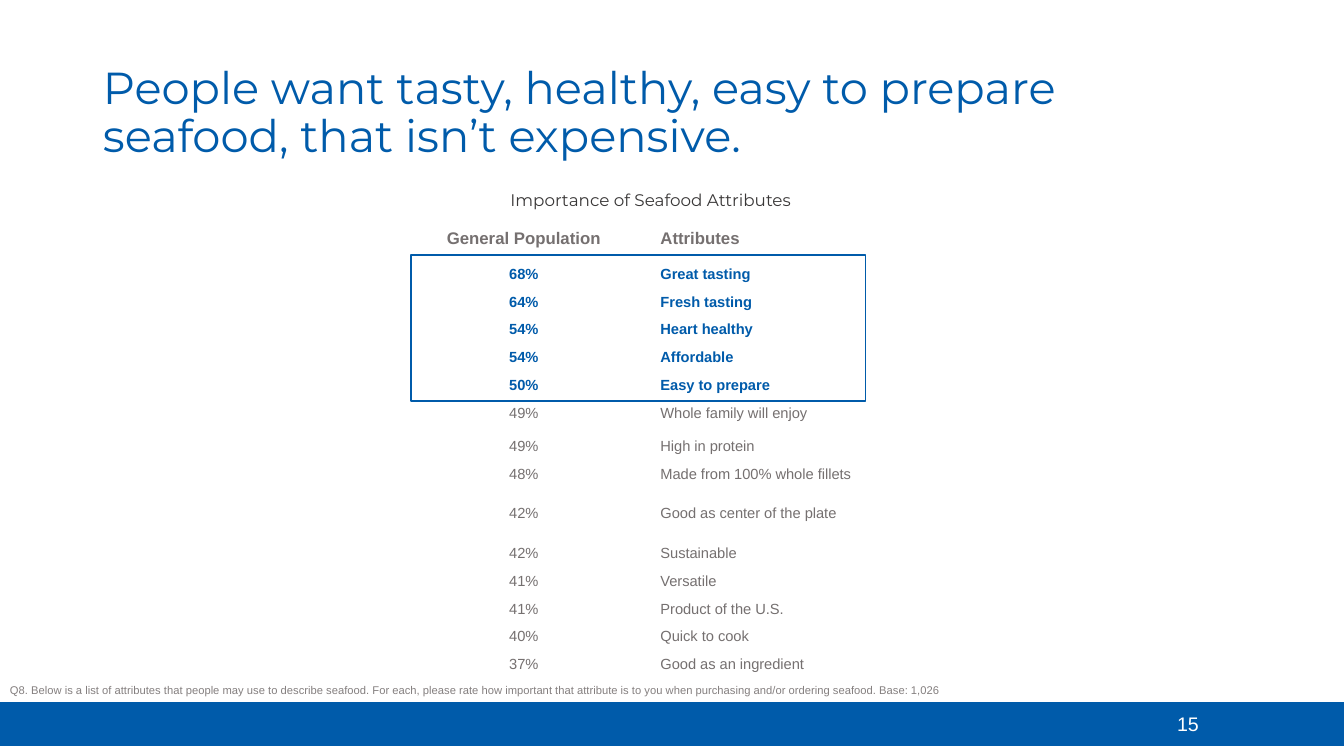
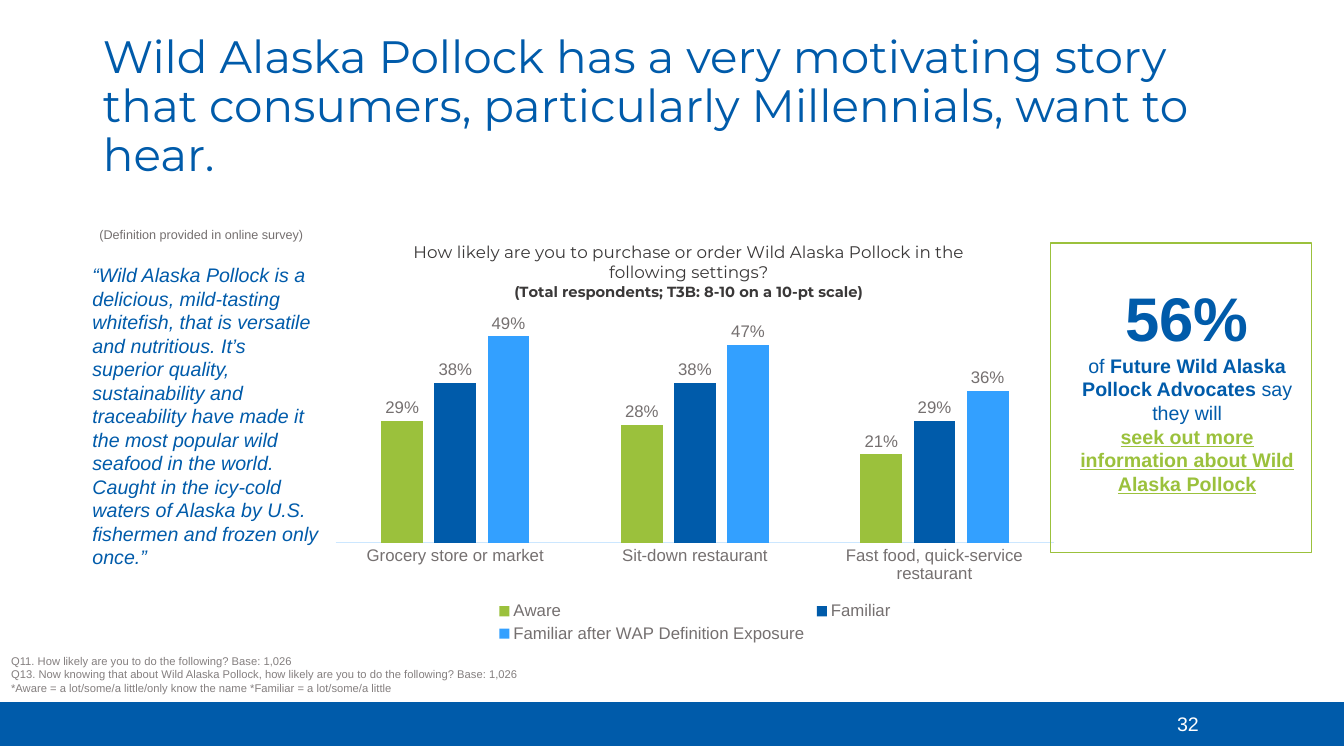
from lxml import etree
from pptx import Presentation
from pptx.chart.data import CategoryChartData
from pptx.dml.color import RGBColor
from pptx.enum.chart import XL_CHART_TYPE as ChartType
from pptx.enum.chart import XL_LABEL_POSITION as LabelPosition
from pptx.enum.chart import XL_LEGEND_POSITION as LegendPosition
from pptx.enum.chart import XL_TICK_MARK as TickMark
from pptx.enum.shapes import MSO_SHAPE as Shape
from pptx.enum.text import MSO_ANCHOR as Anchor
from pptx.enum.text import MSO_AUTO_SIZE as AutoSize
from pptx.enum.text import PP_ALIGN as Align
from pptx.oxml.ns import qn
from pptx.util import Cm, Pt

BLUE, GREEN, SKY, PALE = "005BAA", "9BC13C", "33A0FF", "CCE7FF"
GRAY, NOTE_GRAY, DARK, WHITE = "757070", "847F7F", "3A3838", "FFFFFF"
BODY_FONT, HEAD_FONT = "Arial", "Montserrat"
TITLE_ONLY = 5


def color(hex_string):
    return RGBColor.from_string(hex_string)


def lengths(box):
    return [Cm(value) for value in box]


def style_font(font, size, hex_color, name=BODY_FONT, bold=False, italic=False, underline=False):
    font.name, font.size = name, Pt(size)
    font.bold, font.italic, font.underline = bold, italic, underline
    font.color.rgb = color(hex_color)


def write(frame, paragraphs, align=Align.LEFT, **style):
    """Fill a frame; each paragraph is a list of (text, style changes)."""
    for index, runs in enumerate(paragraphs):
        paragraph = frame.add_paragraph() if index else frame.paragraphs[0]
        paragraph.alignment = align
        for text, changes in runs:
            run = paragraph.add_run()
            run.text = text
            style_font(run.font, **{**style, **changes})


def place(element, position, **values):
    """Give a chart part a manual layout in fractions of the chart."""
    for old in element.findall(qn("c:layout")):
        element.remove(old)
    layout = etree.Element(qn("c:layout"))
    manual = etree.SubElement(layout, qn("c:manualLayout"))
    for name, value in values.items():
        etree.SubElement(manual, qn(f"c:{name}")).set("val", str(value))
    element.insert(position, layout)


class Deck:
    def __init__(self):
        self.presentation = Presentation()
        self.presentation.slide_width = Cm(33.87)
        self.presentation.slide_height = Cm(19.05)
        self.slide = None

    def new_slide(self, title, number, title_height, title_size):
        layout = self.presentation.slide_layouts[TITLE_ONLY]
        self.slide = self.presentation.slides.add_slide(layout)
        self.rectangle((0, 17.7, 33.87, 1.07), BLUE, fill=BLUE)
        holder = self.slide.shapes.title
        holder.left, holder.top, holder.width, holder.height = lengths((2.34, 1.02, 29.21, title_height))
        frame = holder.text_frame
        frame.auto_size, frame.word_wrap = AutoSize.NONE, True
        frame.vertical_anchor = Anchor.BOTTOM
        write(frame, [[(title, {})]], size=title_size, hex_color=BLUE, name=HEAD_FONT)
        frame.paragraphs[0].line_spacing = 0.9
        self.text((28.58, 17.81, 2.72, 1.02), [[(str(number), {})]],
                  align=Align.CENTER, size=14, hex_color=WHITE)

    def rectangle(self, box, line, fill=None):
        shape = self.slide.shapes.add_shape(Shape.RECTANGLE, *lengths(box))
        shape.shadow.inherit = False
        shape.line.color.rgb, shape.line.width = color(line), Pt(1)
        if fill:
            shape.fill.solid()
            shape.fill.fore_color.rgb = color(fill)
        else:
            shape.fill.background()

    def text(self, box, paragraphs, **style):
        frame = self.slide.shapes.add_textbox(*lengths(box)).text_frame
        frame.word_wrap = True
        write(frame, paragraphs, **style)

    def footnotes(self, box, lines):
        self.text(box, [[(line, {})] for line in lines], size=8, hex_color=NOTE_GRAY)

    def table(self, left, top, column_width, heights, rows, highlighted):
        """A header row, then the highlighted rows, then plain ones."""
        columns = len(rows[0])
        table = self.slide.shapes.add_table(
            len(rows), columns, Cm(left), Cm(top),
            Cm(column_width * columns), Cm(sum(heights))).table
        table.first_row = table.horz_banding = False
        for column in table.columns:
            column.width = Cm(column_width)
        for row_index, values in enumerate(rows):
            table.rows[row_index].height = Cm(heights[row_index])
            header = row_index == 0
            strong = 0 < row_index <= highlighted
            for column_index, value in enumerate(values):
                cell = table.cell(row_index, column_index)
                cell.fill.background()
                write(cell.text_frame, [[(value, {})]],
                      align=Align.LEFT if column_index else Align.CENTER,
                      size=12 if header else 10.5,
                      hex_color=BLUE if strong else GRAY, bold=header or strong)

    def column_chart(self, box, title, categories, series):
        data = CategoryChartData(number_format="0%")
        data.categories = categories
        for name, values, _ in series:
            data.add_series(name, values)
        chart = self.slide.shapes.add_chart(
            ChartType.COLUMN_CLUSTERED, *lengths(box), data).chart
        style_font(chart.font, 12, GRAY)

        # Title
        chart.has_title = True
        write(chart.chart_title.text_frame, title, align=Align.CENTER,
              size=12, hex_color=DARK, name=HEAD_FONT)
        chart.chart_title.include_in_layout = False
        place(chart.chart_title._element, 1, xMode="edge", yMode="edge", x=0.12, y=0.09)

        # Axes
        value_axis, category_axis = chart.value_axis, chart.category_axis
        value_axis.visible = value_axis.has_major_gridlines = False
        value_axis.minimum_scale, value_axis.maximum_scale = 0, 0.6
        category_axis.major_tick_mark = category_axis.minor_tick_mark = TickMark.NONE
        category_axis.format.line.color.rgb = color(PALE)
        category_axis.format.line.width = Pt(0.75)
        style_font(category_axis.tick_labels.font, 12, GRAY)

        # Columns and their labels
        plot = chart.plots[0]
        plot.gap_width, plot.overlap, plot.vary_by_categories = 219, -27, False
        for column, (_, _, fill) in zip(plot.series, series):
            column.format.fill.solid()
            column.format.fill.fore_color.rgb = color(fill)
            labels = column.data_labels
            labels.show_value = True
            labels.number_format, labels.number_format_is_linked = "0%", False
            labels.position = LabelPosition.OUTSIDE_END
            style_font(labels.font, 12, GRAY)
        place(chart._chartSpace.chart.plotArea, 0, layoutTarget="inner",
              xMode="edge", yMode="edge", x=0.02, y=0.205, w=0.96, h=0.563)

        # Legend
        chart.has_legend = True
        chart.legend.position = LegendPosition.BOTTOM
        chart.legend.include_in_layout = False
        style_font(chart.legend.font, 12, GRAY)
        place(chart.legend._element, 1, xMode="edge", yMode="edge", x=0.23, y=0.89, w=0.54, h=0.11)


def attributes_slide(deck):
    deck.new_slide("People want tasty, healthy, easy to prepare seafood, that isn’t expensive.",
                   15, title_height=3.2, title_size=32)
    deck.footnotes((0, 17.09, 28.52, 0.61), [
        "Q8. Below is a list of attributes that people may use to describe seafood. "
        "For each, please rate how important that attribute is to you when purchasing "
        "and/or ordering seafood. Base: 1,026"])
    rows = [
        ("General Population", "Attributes"),
        ("68%", "Great tasting"),
        ("64%", "Fresh tasting"),
        ("54%", "Heart healthy"),
        ("54%", "Affordable"),
        ("50%", "Easy to prepare"),
        ("49%", "Whole family will enjoy"),
        ("49%", "High in protein"),
        ("48%", "Made from 100% whole fillets"),
        ("42%", "Good as center of the plate"),
        ("42%", "Sustainable"),
        ("41%", "Versatile"),
        ("41%", "Product of the U.S."),
        ("40%", "Quick to cook"),
        ("37%", "Good as an ingredient"),
    ]
    tall_rows = {0: 0.94, 6: 0.84, 8: 1, 9: 1, 14: 0.84}
    heights = [tall_rows.get(index, 0.7) for index in range(len(rows))]
    deck.table(10.01, 5.64, 6.38, heights, rows, highlighted=5)
    deck.rectangle((10.36, 6.43, 11.46, 3.68), BLUE)
    deck.text((10.01, 4.65, 12.78, 0.76), [[("Importance of Seafood Attributes", {})]],
              align=Align.CENTER, size=12, hex_color=DARK, name=HEAD_FONT)


def story_slide(deck):
    deck.new_slide("Wild Alaska Pollock has a very motivating story that consumers, "
                   "particularly Millennials, want to hear.",
                   32, title_height=3.68, title_size=32.4)
    deck.column_chart(
        (8.08, 4.98, 18.87, 11.33),
        [[("How likely are you to purchase or order Wild Alaska Pollock in the "
           "following settings?", {})],
         [("(Total respondents; T3B: 8-10 on a 10-pt scale)", {"size": 10.5, "bold": True})]],
        ["Grocery store or market", "Sit-down restaurant", "Fast food, quick-service restaurant"],
        [("Aware", (0.29, 0.28, 0.21), GREEN),
         ("Familiar", (0.38, 0.38, 0.29), BLUE),
         ("Familiar after WAP Definition Exposure", (0.49, 0.47, 0.36), SKY)])
    deck.footnotes((0.03, 16.36, 28.58, 1.27), [
        "Q11. How likely are you to do the following? Base: 1,026",
        "Q13. Now knowing that about Wild Alaska Pollock, how likely are you to do "
        "the following? Base: 1,026",
        "*Aware = a lot/some/a little/only know the name *Familiar = a lot/some/a little"])

    # Definition
    deck.text((2.08, 6.5, 6.25, 8.03), [[(
        "“Wild Alaska Pollock is a delicious, mild-tasting whitefish, that is versatile and "
        "nutritious. It’s superior quality, sustainability and traceability have made it the "
        "most popular wild seafood in the world. Caught in the icy-cold waters of Alaska by "
        "U.S. fishermen and frozen only once.”", {})]], size=14, hex_color=BLUE, italic=True)
    deck.text((2.08, 5.59, 5.99, 0.64), [[("(Definition provided in online survey)", {})]],
              align=Align.CENTER, size=9, hex_color=GRAY)

    # Callout
    deck.text((26.95, 6.93, 5.94, 5.74), [
        [("56%", {"size": 44, "bold": True})],
        [("of ", {}), ("Future Wild Alaska Pollock Advocates", {"bold": True}),
         (" say they will", {})],
        [("seek out more information about Wild Alaska Pollock",
          {"hex_color": GREEN, "bold": True, "underline": True})],
    ], align=Align.CENTER, size=14, hex_color=BLUE)
    deck.rectangle((26.47, 6.12, 6.58, 7.8), GREEN)


def main():
    deck = Deck()
    attributes_slide(deck)
    story_slide(deck)
    deck.presentation.save("out.pptx")


if __name__ == "__main__":
    main()
